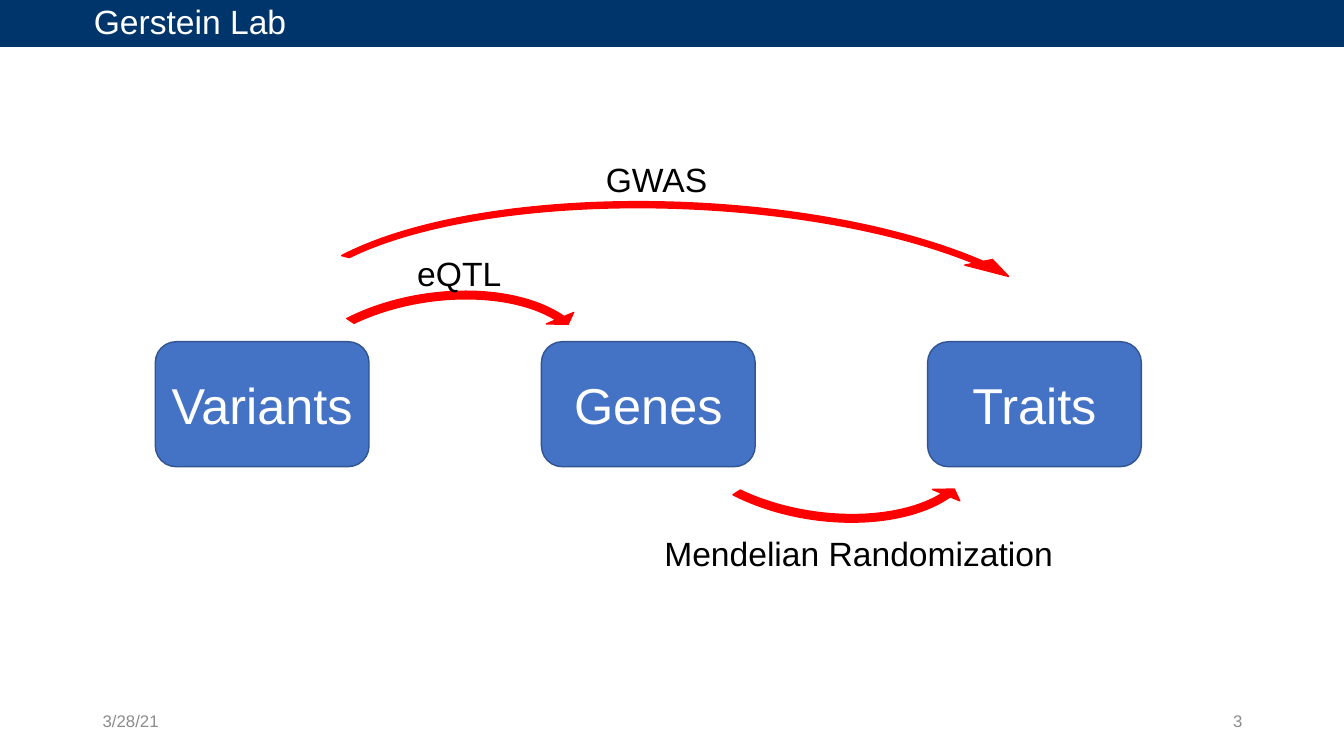
from pptx import Presentation
from pptx.dml.color import RGBColor
from pptx.enum.shapes import MSO_SHAPE
from pptx.enum.text import MSO_ANCHOR, PP_ALIGN
from pptx.util import Inches, Pt

LEFT, CENTER, RIGHT = PP_ALIGN.LEFT, PP_ALIGN.CENTER, PP_ALIGN.RIGHT
TOP, MIDDLE = MSO_ANCHOR.TOP, MSO_ANCHOR.MIDDLE
BOX, ARROW = MSO_SHAPE.ROUNDED_RECTANGLE, MSO_SHAPE.CIRCULAR_ARROW
NO_STYLE = "{2D5ABB26-0587-4C30-8999-92F81FD0307C}"
COLORS = {"navy": "00356B", "blue": "4472C4", "edge": "325491", "red": "FF0000",
          "white": "FFFFFF", "black": "000000", "gray": "8C8C8C"}

# Grid: three columns of boxes
W, H = 13.33, 7.5
COL0, PITCH = 1.54, 3.83
BOX_TOP, BOX_W, BOX_H = 3.39, 2.12, 1.24


def write(tf, text, size, color, align=LEFT):
    p = tf.paragraphs[0]
    p.alignment = align
    r = p.add_run()
    r.text = text
    for name, value in {"name": "Arial", "size": Pt(size)}.items():
        setattr(r.font, name, value)
    r.font.color.rgb = RGBColor.from_string(COLORS[color])


def add_shape(kind, x, y, w, h, fill, line):
    sp = s.shapes.add_shape(kind, Inches(x), Inches(y), Inches(w), Inches(h))
    sp.shadow.inherit = False
    sp.fill.solid()
    sp.fill.fore_color.rgb = RGBColor.from_string(COLORS[fill])
    sp.line.color.rgb = RGBColor.from_string(COLORS[line])
    sp.line.width = Pt(1)
    return sp


prs = Presentation()
prs.slide_width, prs.slide_height = Inches(W), Inches(H)
s = prs.slides.add_slide(prs.slide_layouts[6])

# Header band
frame = s.shapes.add_table(1, 3, 0, Inches(-0.01), Inches(W), Inches(0.46))
table = frame.table
table.first_row = table.horz_banding = False
table._tbl.tblPr[0].text = NO_STYLE
for cell in table.rows[0].cells:
    cell.fill.solid()
    cell.fill.fore_color.rgb = RGBColor.from_string(COLORS["navy"])
header = table.cell(0, 0)
header.margin_left = Inches(0.93)
write(header.text_frame, "Gerstein Lab", 24, "white")

# Boxes, one per column
for i, name in enumerate(["Variants", "Genes", "Traits"]):
    sp = add_shape(BOX, COL0 + i * PITCH, BOX_TOP, BOX_W, BOX_H, "blue", "edge")
    sp.text_frame.vertical_anchor = MIDDLE
    write(sp.text_frame, name, 36, "white", CENTER)

# Curved arrows: column, offset, top, width, height, rotation, flipped, adjustments
short = [0.04, 2.219, 205.191, 132.958, 0.077]
long = [0.02, 2.219, 205.44, 115.047, 0.047]
for col, dx, y, w, h, turn, flipped, adjustments in [
    (0, 1.16, 2.8, 3.29, 1.91, 351.7, False, short),
    (1, 1.16, 3.36, 3.29, 1.91, 8.3, True, short),
    (0, 1.14, 1.9, 8.18, 2.99, 2.5, False, long),
]:
    sp = add_shape(ARROW, COL0 + col * PITCH + dx, y, w, h, "red", "red")
    for i, value in enumerate(adjustments):
        sp.adjustments[i] = value
    sp.rotation = turn
    if flipped:
        sp._element.spPr.xfrm.set("flipV", "1")

# Arrow labels and footer
for text, x, y, w, h, size, color, align, anchor, wrap in [
    ("eQTL", 4.04, 2.46, 1.04, 0.5, 24, "black", LEFT, TOP, False),
    ("GWAS", 5.91, 1.53, 1.22, 0.5, 24, "black", LEFT, TOP, False),
    ("Mendelian Randomization", 6.49, 5.24, 4.1, 0.5, 24, "black", LEFT, TOP, False),
    ("3/28/21", 0.92, 6.95, 3, 0.4, 12, "gray", LEFT, MIDDLE, True),
    ("3", 9.42, 6.95, 3, 0.4, 12, "gray", RIGHT, MIDDLE, True),
]:
    tf = s.shapes.add_textbox(Inches(x), Inches(y), Inches(w), Inches(h)).text_frame
    tf.word_wrap = wrap
    tf.vertical_anchor = anchor
    write(tf, text, size, color, align)

prs.save("out.pptx")
